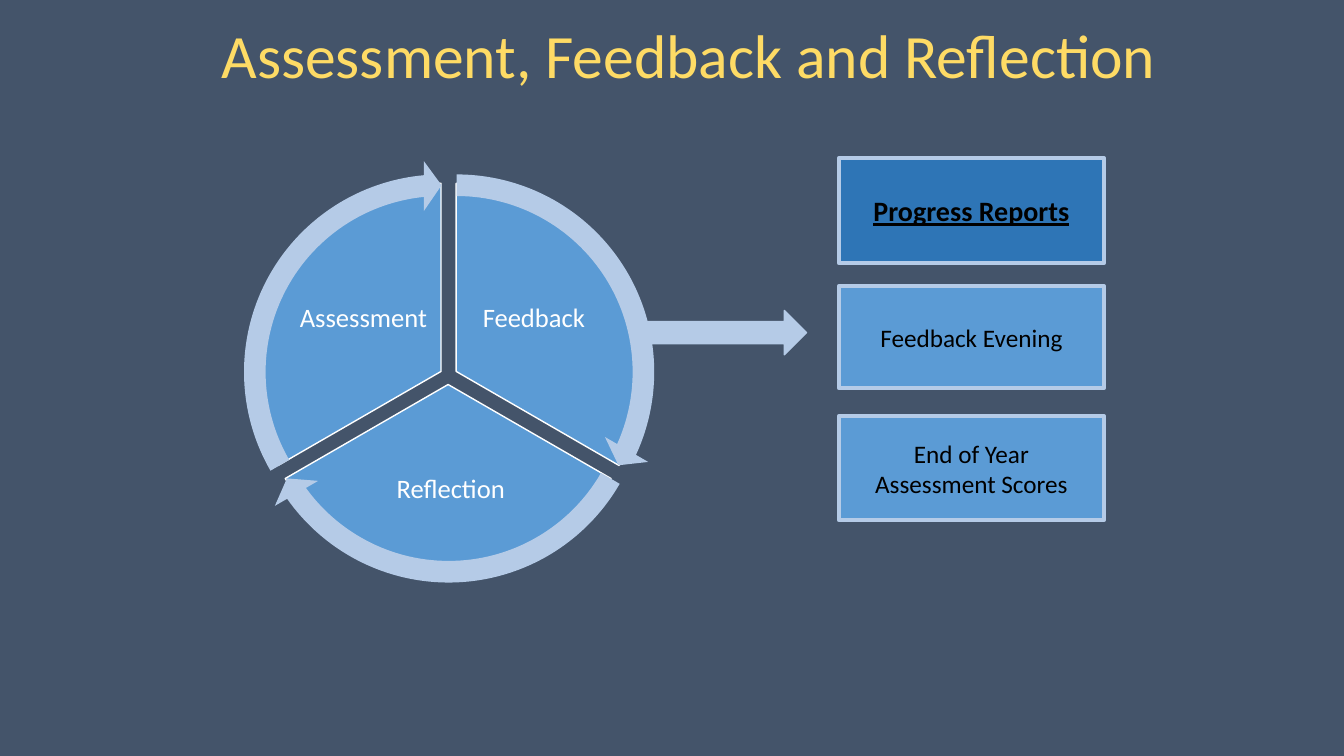
from pptx import Presentation
from pptx.dml.color import RGBColor as RGB
from pptx.enum.shapes import MSO_SHAPE as Kind
from pptx.enum.text import MSO_ANCHOR as Anchor, PP_ALIGN as Align
from pptx.util import Inches, Pt

THEME = {
    "back": "44546A", "pale": "B5CBE7", "blue": "5B9BD5", "deep": "2E75B6",
    "white": "FFFFFF", "black": "000000", "gold": "FEDB65",
    "font": "Calibri", "title": 44, "lead": 20, "label": 19, "body": 18,
}
TITLE = "Assessment, Feedback and Reflection"

# label, label box, wedge corner, wedge angles, arrow angles
WEDGES = [
    ("Feedback", (4.63, 2.61, 1.33, 1.11), (2.66, 1.82), (270, 30), (24.54, 269.99)),
    ("Reflection", (3.47, 4.37, 2, 0.98), (2.58, 1.95), (30, 150), (144.53, 30.01)),
    ("Assessment", (2.94, 2.61, 1.33, 1.11), (2.51, 1.82), (150, 270), (264.55, 150)),
]
# lines, top, height, fill, size, emphasis
REPORTS = [
    (["Progress Reports"], 1.57, 1.04, "deep", "lead", {"bold": True, "underline": True}),
    (["Feedback Evening"], 2.84, 1.01, "blue", "body", {}),
    (["End of Year", "Assessment Scores"], 4.13, 1.03, "blue", "body", {}),
]
PIE, RING = 3.73, 4.2
EDGE = 0.23  # how far each ring reaches beyond its wedge
TURN = 0.6  # adjustment units in one degree


def tint(name):
    return RGB.from_string(THEME[name])


def draw(shapes, kind, box, fill, line=None, width=1, adjust=()):
    shape = shapes.add_shape(kind, *map(Inches, box))
    shape.shadow.inherit = False
    shape.fill.solid()
    shape.fill.fore_color.rgb = tint(fill)
    if line:
        shape.line.color.rgb = tint(line)
        shape.line.width = Pt(width)
    else:
        shape.line.fill.background()
    for i, value in enumerate(adjust):
        shape.adjustments[i] = value
    return shape


def write(shape, lines, size, color, inset=None, spacing=None, **style):
    frame = shape.text_frame
    frame.word_wrap = True
    frame.vertical_anchor = Anchor.MIDDLE
    if inset is not None:
        for side in ("left", "top", "right", "bottom"):
            setattr(frame, f"margin_{side}", Inches(inset))
    frame.text = "\n".join(lines)
    look = {"name": THEME["font"], "size": Pt(THEME[size]), **style}
    for para in frame.paragraphs:
        para.alignment = Align.CENTER
        para.line_spacing = spacing
        font = para.runs[0].font
        font.color.rgb = tint(color)
        for key, value in look.items():
            setattr(font, key, value)


def add_cycle(shapes):
    for label, box, corner, angles, _ in WEDGES:
        draw(shapes, Kind.PIE, (*corner, PIE, PIE), "blue", "white",
             adjust=[a * TURN for a in angles])
        text = shapes.add_textbox(*map(Inches, box))
        write(text, [label], "label", "white", inset=0.03, spacing=0.9)
    for _, _, (left, top), _, (end, start) in WEDGES:
        draw(shapes, Kind.CIRCULAR_ARROW, (left - EDGE, top - EDGE, RING, RING), "pale",
             adjust=[0.051, 3.275, end * TURN, start * TURN, 0.059])


def main():
    deck = Presentation()
    deck.slide_width, deck.slide_height = Inches(13.33), Inches(7.5)
    slide = deck.slides.add_slide(deck.slide_layouts[6])
    slide.background.fill.solid()
    slide.background.fill.fore_color.rgb = tint("back")
    shapes = slide.shapes

    add_cycle(shapes.add_group_shape().shapes)
    draw(shapes, Kind.RIGHT_ARROW, (6.27, 3.08, 1.73, 0.44), "pale", "pale")
    for lines, top, height, fill, size, style in REPORTS:
        card = draw(shapes, Kind.RECTANGLE, (8.32, top, 2.63, height), fill, "pale", 3)
        write(card, lines, size, "black", **style)
    title = shapes.add_textbox(*map(Inches, (0.92, 0.11, 11.83, 0.84)))
    write(title, [TITLE], "title", "gold")
    deck.save("out.pptx")


if __name__ == "__main__":
    main()
